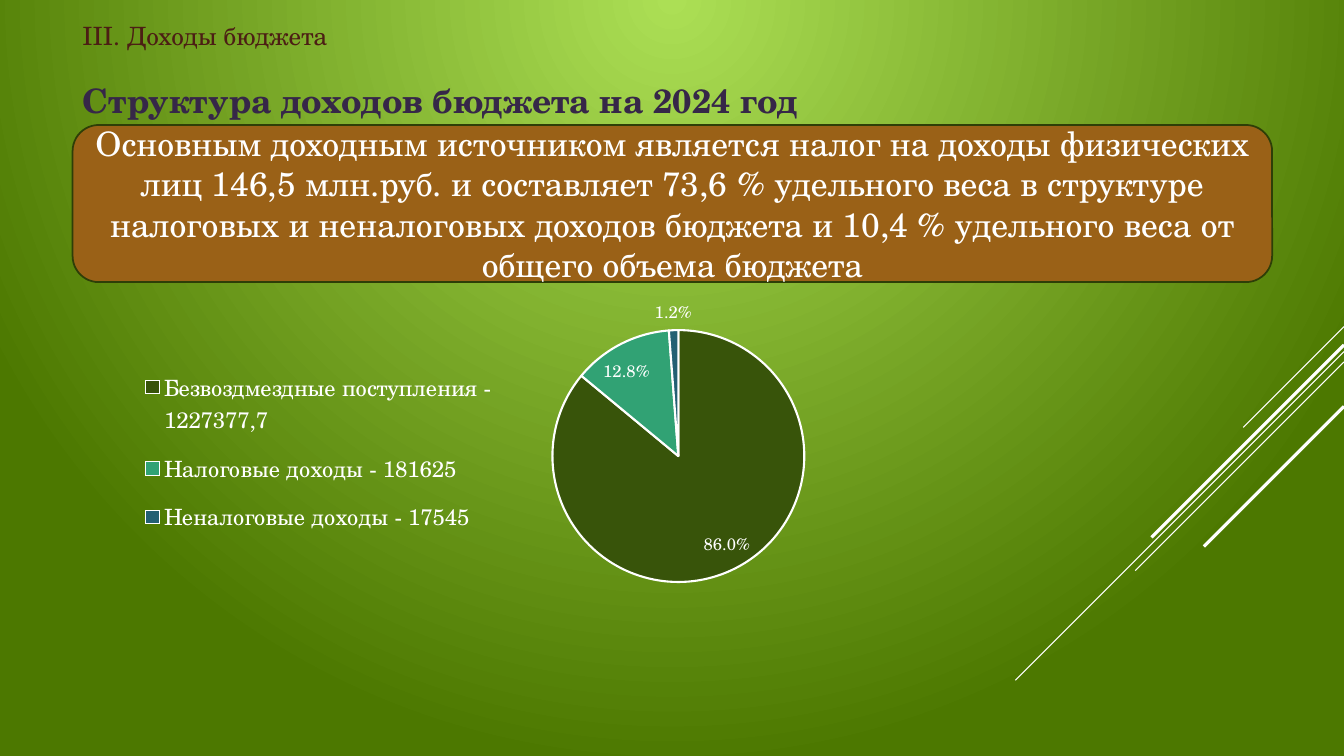
from dataclasses import dataclass

from lxml.etree import SubElement
from pptx import Presentation
from pptx.chart.data import CategoryChartData
from pptx.dml.color import RGBColor
from pptx.enum.chart import XL_CHART_TYPE, XL_LABEL_POSITION, XL_LEGEND_POSITION
from pptx.enum.shapes import MSO_CONNECTOR, MSO_SHAPE
from pptx.enum.text import MSO_ANCHOR, MSO_AUTO_SIZE, PP_ALIGN
from pptx.oxml import parse_xml
from pptx.oxml.ns import nsdecls, qn
from pptx.util import Cm, Pt


@dataclass(frozen=True)
class Theme:
    font: str = "TeX Gyre Schola"
    chart_font: str = "Quicksand"
    white: str = "FFFFFF"
    glow: str = "ACDF55"
    edge: str = "4C7800"
    section: str = "4C1E14"
    title: str = "362748"
    callout: str = "9A6117"
    callout_line: str = "2E3E07"
    slices: tuple = ("38540A", "31A274", "236073")
    large: float = 24
    medium: float = 18
    legend: float = 16
    label: float = 11.9
    small: float = 10


theme = Theme()


def style(font, size, color, name=theme.font, bold=False):
    font.name, font.size, font.bold = name, Pt(size), bold
    font.color.rgb = RGBColor.from_string(color)


def set_layout(parent, index, target, frame):
    """Pin a chart part to fractions (x, y, w, h) of the chart area."""
    for previous in parent.findall(qn("c:layout")):
        parent.remove(previous)
    inner = f'<c:layoutTarget val="{target}"/>' if target else ""
    modes = '<c:xMode val="edge"/><c:yMode val="edge"/>'
    sizes = "".join(f'<c:{key} val="{value}"/>' for key, value in zip("xywh", frame))
    parent.insert(index, parse_xml(
        f'<c:layout {nsdecls("c")}><c:manualLayout>{inner}{modes}{sizes}'
        "</c:manualLayout></c:layout>"))


deck = Presentation()
deck.slide_width, deck.slide_height = Cm(33.87), Cm(19.05)
page = deck.slides.add_slide(deck.slide_layouts[5])
left, width = Cm(1.83), Cm(30.23)

# Background: a glow from the middle of the top edge
background = page.background.fill
background.gradient()
for stop, color in zip(background.gradient_stops, (theme.glow, theme.edge)):
    stop.color.rgb = RGBColor.from_string(color)
gradient = page.background._cSld.find(".//" + qn("a:gradFill"))
gradient.replace(gradient.find(qn("a:lin")), parse_xml(
    f'<a:path {nsdecls("a")} path="circle"><a:fillToRect b="100000"/></a:path>'))

# Diagonal lines from the right edge: start height, reach, weight
for top, reach, weight in ((8.23, 2.54, 0.75), (8.86, 8.28, 0.75), (9.12, 5.26, 0.75),
                           (8.69, 4.85, 2.25), (10.24, 3.53, 2.25)):
    ray = page.shapes.add_connector(MSO_CONNECTOR.STRAIGHT, Cm(33.87), Cm(top),
                                    Cm(33.87 - reach), Cm(top + reach))
    ray.line.color.rgb = RGBColor.from_string(theme.white)
    ray.line.width = Pt(weight)
    SubElement(ray._element.spPr, qn("a:effectLst"))

# Income pie
data = CategoryChartData(number_format="0.0%")
data.categories = ("Безвоздмездные поступления - 1227377,7",
                   "Налоговые доходы - 181625",
                   "Неналоговые доходы - 17545")
data.add_series("Series 1", (0.86, 0.128, 0.012))
chart = page.shapes.add_chart(XL_CHART_TYPE.PIE, left, Cm(7.14), width, Cm(10.01), data).chart
chart.has_title = False
style(chart.font, theme.small, theme.white, theme.chart_font)

plot = chart.plots[0]
plot.vary_by_categories = True
series = plot.series[0]
for index, color in enumerate(theme.slices):
    portion = series.points[index].format
    portion.fill.solid()
    portion.fill.fore_color.rgb = RGBColor.from_string(color)
    portion.line.color.rgb = RGBColor.from_string(theme.white)
    portion.line.width = Pt(1.5)

labels = series.data_labels
labels.show_value = True
labels.number_format, labels.number_format_is_linked = "0.0%", False
labels.position = XL_LABEL_POSITION.BEST_FIT
style(labels.font, theme.label, theme.white)

chart.has_legend = True
chart.legend.position = XL_LEGEND_POSITION.BOTTOM
chart.legend.include_in_layout = False
style(chart.legend.font, theme.legend, theme.white)
set_layout(chart.legend._element, 1, None, (0.05, 0.18, 0.31, 0.49))
set_layout(chart._chartSpace.chart.plotArea, 0, "inner", (0.4, 0.11, 0.21, 0.65))

# Section name, title and callout
section = page.shapes.add_textbox(left, Cm(0.48), width, Cm(0.84))
section.text_frame.text = "III. Доходы бюджета"

title = page.shapes.title
title.left, title.top, title.width, title.height = left, Cm(1.88), width, Cm(1.27)
title.text_frame.text = "Структура доходов бюджета на 2024 год"

callout = page.shapes.add_shape(MSO_SHAPE.ROUNDED_RECTANGLE, left, Cm(3.15), width, Cm(3.96))
callout.shadow.inherit = False
callout.fill.solid()
callout.fill.fore_color.rgb = RGBColor.from_string(theme.callout)
callout.line.color.rgb = RGBColor.from_string(theme.callout_line)
callout.line.width = Pt(1.25)
callout.text_frame.text = (
    "Основным доходным источником является налог на доходы физических лиц "
    "146,5 млн.руб. и составляет 73,6 % удельного веса в структуре налоговых "
    "и неналоговых доходов бюджета и 10,4 % удельного веса от общего объема бюджета")

for box, size, color, bold, align in (
        (section, theme.medium, theme.section, False, PP_ALIGN.LEFT),
        (title, theme.large, theme.title, True, PP_ALIGN.LEFT),
        (callout, theme.large, theme.white, False, PP_ALIGN.CENTER)):
    frame = box.text_frame
    frame.word_wrap = True
    frame.auto_size = MSO_AUTO_SIZE.NONE
    frame.vertical_anchor = MSO_ANCHOR.MIDDLE
    para = frame.paragraphs[0]
    para.alignment = align
    style(para.runs[0].font, size, color, bold=bold)

deck.save("out.pptx")
